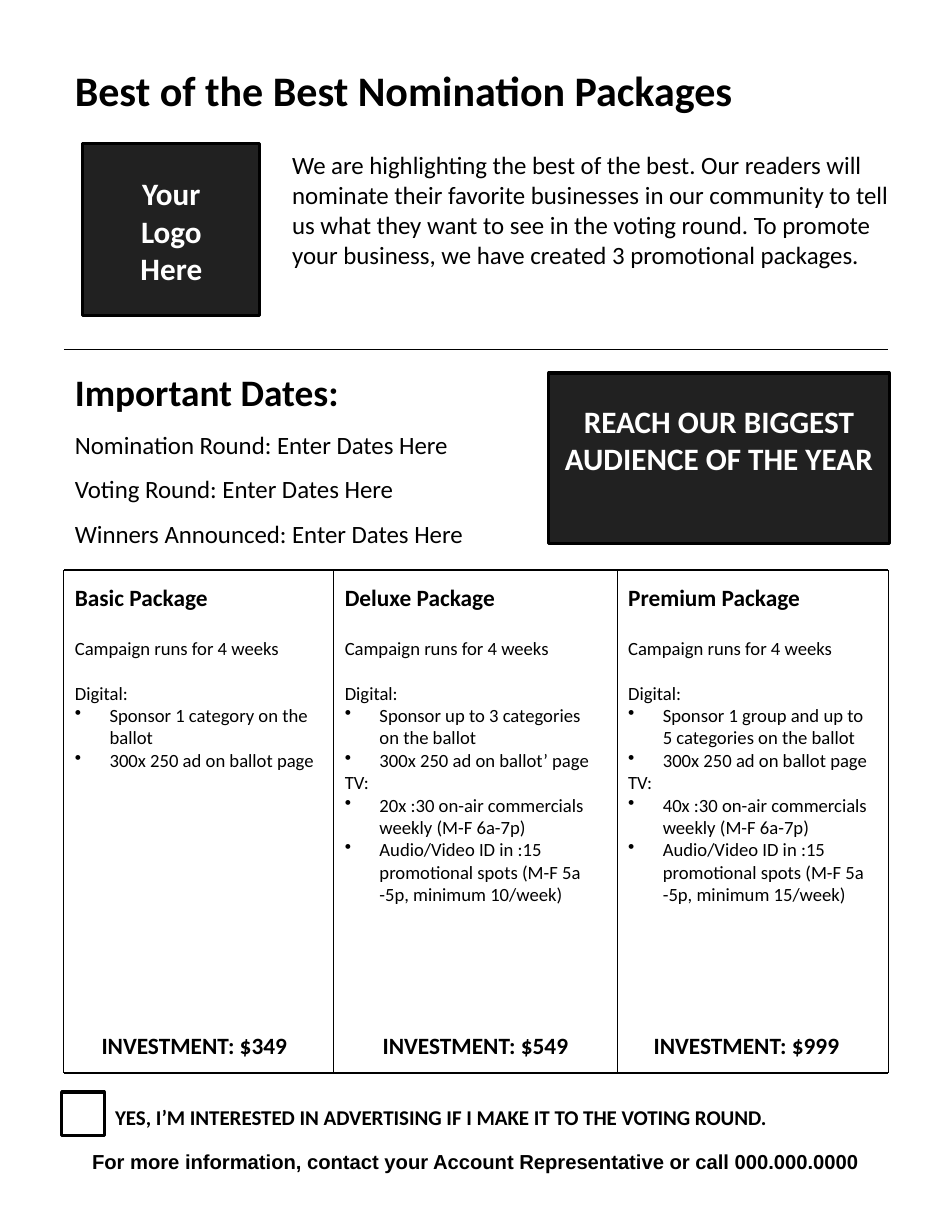
from dataclasses import dataclass

from lxml.etree import SubElement
from pptx import Presentation
from pptx.dml.color import RGBColor
from pptx.enum.shapes import MSO_CONNECTOR, MSO_SHAPE
from pptx.enum.text import PP_ALIGN
from pptx.oxml.ns import qn
from pptx.util import Inches, Pt


@dataclass(frozen=True)
class Theme:
    """Colours, fonts and type sizes of the flyer."""
    ink: RGBColor = RGBColor(0, 0, 0)
    paper: RGBColor = RGBColor(255, 255, 255)
    panel: RGBColor = RGBColor(0x21, 0x21, 0x21)
    font: str = "Calibri"
    plain: str = "Arial"
    title: float = 27
    head: float = 24
    badge: float = 20
    body: float = 16
    name: float = 15
    reply: float = 13.5
    call: float = 13
    item: float = 12


THEME = Theme()
LEFT, RIGHT = 0.57, 7.93
PACKS = [
    ("Basic Package", "INVESTMENT: $349", [
        ("Digital:", ["Sponsor 1 category on the ballot",
                      "300x 250 ad on ballot page"])]),
    ("Deluxe Package", "INVESTMENT: $549", [
        ("Digital:", ["Sponsor up to 3 categories on the ballot",
                      "300x 250 ad on ballot’ page"]),
        ("TV:", ["20x :30 on-air commercials weekly (M-F 6a-7p)",
                 "Audio/Video ID in :15 promotional spots (M-F 5a -5p, minimum 10/week)"])]),
    ("Premium Package", "INVESTMENT: $999", [
        ("Digital:", ["Sponsor 1 group and up to 5 categories on the ballot",
                      "300x 250 ad on ballot page"]),
        ("TV:", ["40x :30 on-air commercials weekly (M-F 6a-7p)",
                 "Audio/Video ID in :15 promotional spots (M-F 5a -5p, minimum 15/week)"])]),
]


def add_frame(slide, box):
    """Add an empty wrapping text box and return its text frame."""
    frame = slide.shapes.add_textbox(*map(Inches, box)).text_frame
    frame.word_wrap = True
    frame.margin_left = frame.margin_right = Inches(0.1)
    frame.margin_top = frame.margin_bottom = Inches(0.1)
    return frame


def add_bullet(para):
    """Give a paragraph a hanging round bullet."""
    props = para._p.get_or_add_pPr()
    props.set("marL", str(Inches(0.31)))
    props.set("indent", str(-Inches(0.31)))
    SubElement(props, qn("a:buChar")).set("char", "•")


def add_para(frame, text, size, bold=False, color=THEME.ink, font=THEME.font,
             align=PP_ALIGN.LEFT, before=0, spacing=None, bullet=False):
    """Write one paragraph, using the first empty one if there is one."""
    para = frame.paragraphs[0] if not frame.text else frame.add_paragraph()
    para.text = text
    para.alignment = align
    if before:
        para.space_before = Pt(before)
    if spacing:
        para.line_spacing = spacing
    if bullet:
        add_bullet(para)
    para.font.size = Pt(size)
    para.font.bold = bold
    para.font.name = font
    para.font.color.rgb = color


def add_panel(slide, box, fill):
    """Draw a filled rectangle with a heavy outline."""
    shape = slide.shapes.add_shape(MSO_SHAPE.RECTANGLE, *map(Inches, box))
    shape.shadow.inherit = False
    shape.fill.solid()
    shape.fill.fore_color.rgb = fill
    shape.line.color.rgb = THEME.ink
    shape.line.width = Pt(2)


def add_rule(slide, *ends):
    """Draw a thin straight line between two points."""
    line = slide.shapes.add_connector(MSO_CONNECTOR.STRAIGHT, *map(Inches, ends))
    line.line.color.rgb = THEME.ink
    line.line.width = Pt(0.75)
    SubElement(line._element.spPr, qn("a:effectLst"))


def add_badge(slide, box, inset, grow, lines):
    """Place a dark panel with centred white lines."""
    left, top, width, height = box
    add_panel(slide, box, THEME.panel)
    frame = add_frame(slide, (left - grow, top + inset, width + 2 * grow, height - inset))
    for text in lines:
        add_para(frame, text, THEME.badge, True, THEME.paper, align=PP_ALIGN.CENTER)


def add_intro(slide, box):
    """Place the title, logo panel and opening text."""
    left, top, width, _ = box
    add_para(add_frame(slide, (left, top, width, 0.67)),
             "Best of the Best Nomination Packages", THEME.title, True)
    add_badge(slide, (left + 0.17, top + 0.8, 1.58, 1.54), 0.18, 0.07,
              ["Your", "Logo", "Here"])
    add_para(add_frame(slide, (left + 1.94, top + 0.76, 5.65, 1.62)),
             "We are highlighting the best of the best. Our readers will nominate "
             "their favorite businesses in our community to tell us what they want "
             "to see in the voting round. To promote your business, we have created "
             "3 promotional packages.", THEME.body)


def add_dates(slide, box):
    """Place the list of dates and the slogan panel."""
    left, top, width, height = box
    add_rule(slide, left, top - 0.08, left + width, top - 0.08)
    frame = add_frame(slide, (left, top, 5.35, height))
    add_para(frame, "Important Dates:", THEME.head, True)
    for stage in ("Nomination Round", "Voting Round", "Winners Announced"):
        add_para(frame, f"{stage}: Enter Dates Here", THEME.body, spacing=1.5)
    add_badge(slide, (left + width - 3.03, top + 0.13, 3.04, 1.52), 0.16, 0,
              ["REACH OUR BIGGEST AUDIENCE OF THE YEAR"])


def add_pack(slide, box, pack, shift):
    """Fill one package column with its offer and price."""
    left, top, width, height = box
    name, price, groups = pack
    frame = add_frame(slide, (left, top, width, height - 0.02))
    add_para(frame, name, THEME.name, True)
    add_para(frame, "Campaign runs for 4 weeks", THEME.item, before=16)
    for rank, (label, items) in enumerate(groups):
        add_para(frame, label, THEME.item, before=0 if rank else 14.6)
        for item in items:
            add_para(frame, item, THEME.item, bullet=True)
    add_para(add_frame(slide, (left + shift, top + height - 0.47, width, 0.4)),
             price, THEME.name, True, align=PP_ALIGN.CENTER)


def add_packs(slide, box):
    """Rule the package grid and fill its three columns."""
    left, top, width, height = box
    right, base = left + width, top + height
    edges = [left, 2.98, 5.51, right]
    for y in (top, base):
        add_rule(slide, left, y, right, y)
    for x in edges:
        add_rule(slide, x, top, x, base)
    for x, pack, shift in zip(edges, PACKS, (-0.04, 0.06, -0.05)):
        add_pack(slide, (x, top + 0.02, 2.41, height - 0.02), pack, shift)


def add_reply(slide, box):
    """Place the tick box, its label and the contact line."""
    left, top, width, _ = box
    add_panel(slide, (left - 0.02, top, 0.38, 0.39), THEME.paper)
    add_para(add_frame(slide, (left + 0.36, top + 0.01, width, 0.4)),
             "YES, I’M INTERESTED IN ADVERTISING IF I MAKE IT TO THE VOTING ROUND.",
             THEME.reply, True)
    add_para(add_frame(slide, (left - 0.01, top + 0.41, width, 0.4)),
             "For more information, contact your Account Representative or call "
             "000.000.0000", THEME.call, True, font=THEME.plain, align=PP_ALIGN.CENTER)


def main():
    """Build the flyer and save it."""
    deck = Presentation()
    deck.slide_width, deck.slide_height = Inches(8.5), Inches(11)
    slide = deck.slides.add_slide(deck.slide_layouts[6])
    width = RIGHT - LEFT
    add_intro(slide, (LEFT, 0.48, width, 2.38))
    add_dates(slide, (LEFT, 3.2, width, 1.52))
    add_packs(slide, (LEFT, 5.09, width, 4.49))
    add_reply(slide, (LEFT, 9.75, width, 0.81))
    deck.save("out.pptx")


if __name__ == "__main__":
    main()
